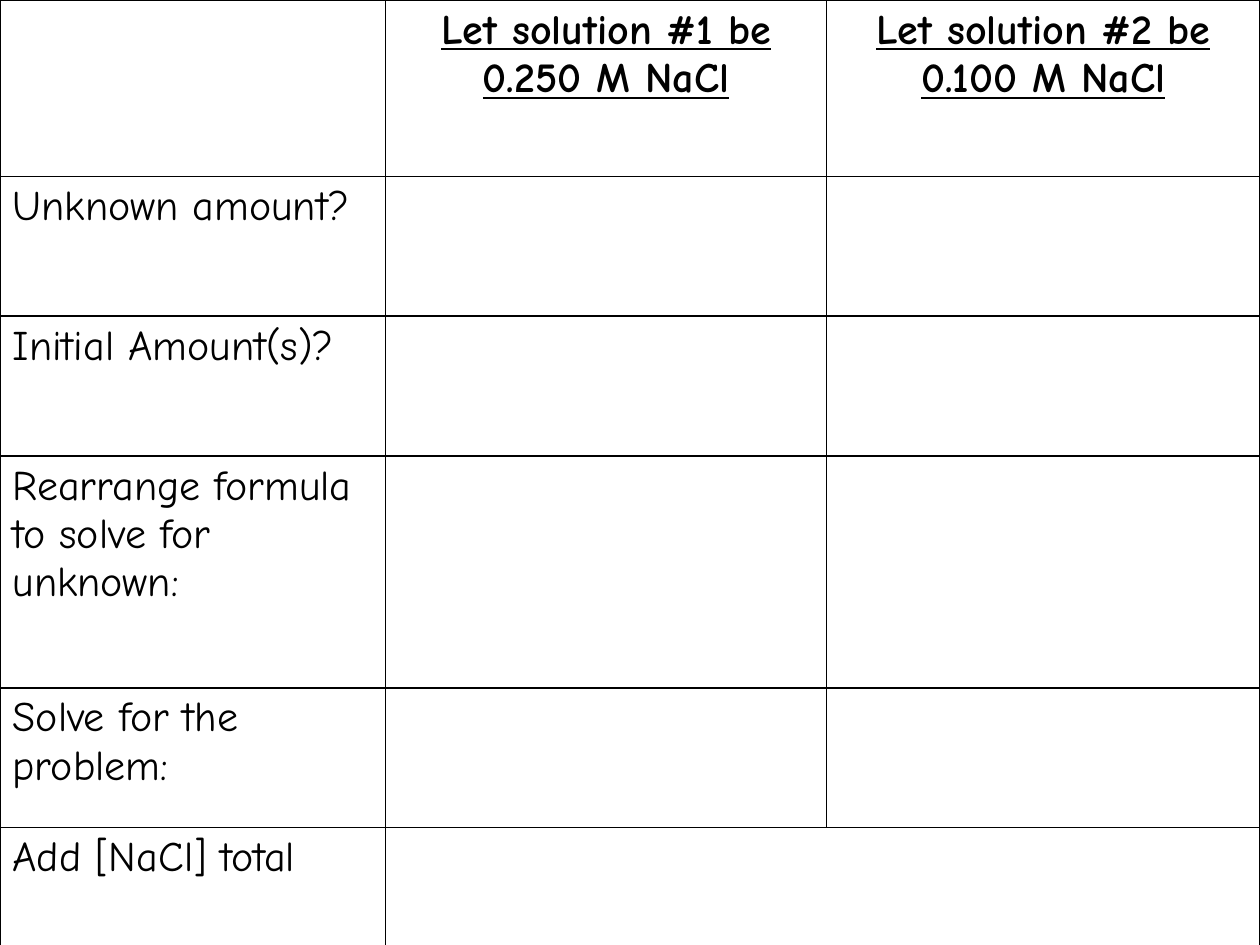
"""Builds a dilution worksheet slide with one ruled table."""
from dataclasses import dataclass

from lxml.etree import SubElement
from pptx import Presentation
from pptx.dml.color import RGBColor
from pptx.enum.text import PP_ALIGN as Align
from pptx.oxml.ns import qn
from pptx.table import Table, _Cell as Cell
from pptx.util import Inches, Pt

INK = "000000"
PAPER = "FFFFFF"
COLUMN_WIDTHS = (3.06, 3.5, 3.44)
ROW_HEIGHTS = (1.4, 1.11, 1.11, 1.84, 1.11, 1.11)
BORDER_SIDES = ("a:lnL", "a:lnR", "a:lnT", "a:lnB")
HEADING_FORMAT = {"bold": True, "underline": True}
PROMPT_FORMAT = {"bold": False, "underline": False}


@dataclass(frozen=True)
class Label:
    row: int
    column: int
    text: str

    @property
    def is_heading(self) -> bool:
        return self.row == 0


HEADINGS = (
    "Let solution #1 be 0.250 M NaCl",
    "Let solution #2 be 0.100 M NaCl",
)
PROMPTS = (
    "Unknown amount?",
    "Initial Amount(s)?",
    "Rearrange formula to solve for unknown:",
    "Solve for the problem:",
    "Add [NaCl] total",
)
LABELS = [Label(0, column, text) for column, text in enumerate(HEADINGS, 1)] + [
    Label(row, 0, text) for row, text in enumerate(PROMPTS, 1)
]


def color(value: str) -> RGBColor:
    return RGBColor.from_string(value)


def style_cell(cell: Cell) -> None:
    cell.fill.solid()
    cell.fill.fore_color.rgb = color(PAPER)
    properties = cell._tc.get_or_add_tcPr()
    for position, side in enumerate(BORDER_SIDES):
        line = SubElement(properties, qn(side), w=str(Pt(1)))
        fill = SubElement(line, qn("a:solidFill"))
        SubElement(fill, qn("a:srgbClr"), val=INK)
        properties.insert(position, line)


def write_label(table: Table, label: Label) -> None:
    paragraph = table.cell(label.row, label.column).text_frame.paragraphs[0]
    paragraph.alignment = Align.CENTER if label.is_heading else Align.LEFT
    run = paragraph.add_run()
    run.text = label.text
    emphasis = HEADING_FORMAT if label.is_heading else PROMPT_FORMAT
    font_format = {"name": "Comic Neue", "size": Pt(24), **emphasis}
    for attribute, value in font_format.items():
        setattr(run.font, attribute, value)
    run.font.color.rgb = color(INK)


def main() -> None:
    presentation = Presentation()
    presentation.slide_width = Inches(10)
    presentation.slide_height = Inches(7.5)
    slide = presentation.slides.add_slide(presentation.slide_layouts[6])

    table = slide.shapes.add_table(
        len(ROW_HEIGHTS), len(COLUMN_WIDTHS), Inches(0), Inches(0),
        Inches(sum(COLUMN_WIDTHS)), Inches(sum(ROW_HEIGHTS)),
    ).table
    table.first_row = False
    table.horz_banding = False
    for column, width in zip(table.columns, COLUMN_WIDTHS):
        column.width = Inches(width)
    for row, height in zip(table.rows, ROW_HEIGHTS):
        row.height = Inches(height)

    for cell in table.iter_cells():
        style_cell(cell)
    last_row = len(ROW_HEIGHTS) - 1
    table.cell(last_row, 1).merge(table.cell(last_row, 2))
    for label in LABELS:
        write_label(table, label)

    presentation.save("out.pptx")


if __name__ == "__main__":
    main()
